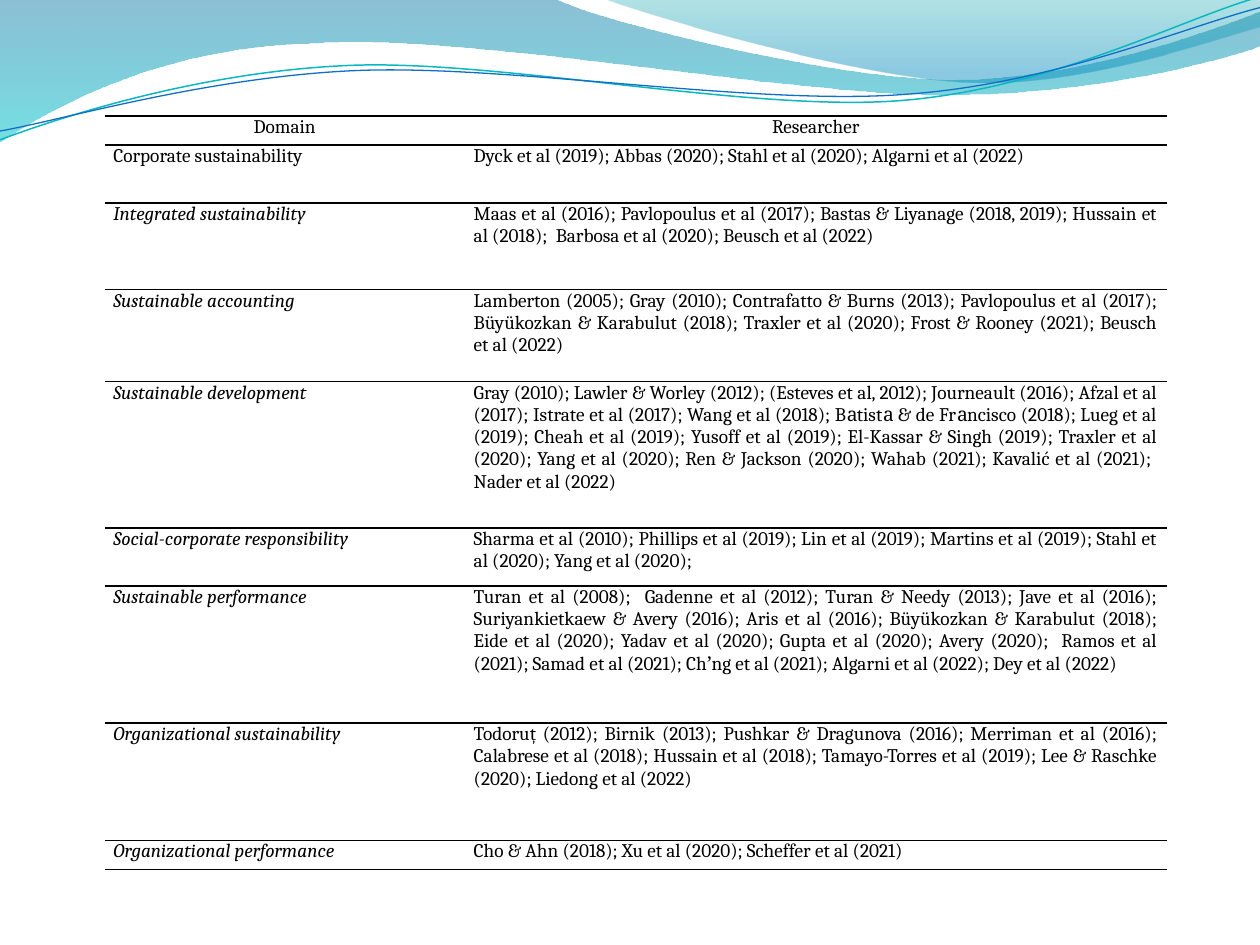
from math import cos, radians, sin

from lxml.etree import SubElement
from pptx import Presentation
from pptx.dml.color import RGBColor
from pptx.enum.text import PP_ALIGN
from pptx.oxml import parse_xml
from pptx.oxml.ns import nsdecls, qn
from pptx.util import Inches, Pt

BLACK = RGBColor(0, 0, 0)
WHITE = RGBColor(255, 255, 255)
DEEP_BLUE = RGBColor(0x00, 0x74, 0xA1)
AQUA = RGBColor(0x00, 0xC6, 0xCF)
SEA = RGBColor(0x00, 0xA1, 0xA9)
SKY = RGBColor(0x00, 0x8B, 0xBF)
TEAL = RGBColor(0x0A, 0xB8, 0xBF)
BLUE = RGBColor(0x0F, 0x6F, 0xC6)
FONT = "Cambria"

HEADER = ("Domain", "Researcher")
ROWS = [
    (0.46, "Corporate sustainability",
     "Dyck et al (2019); Abbas (2020); Stahl et al (2020); Algarni et al (2022)"),
    (0.69, "Integrated sustainability",
     "Maas et al (2016); Pavlopoulus et al (2017); Bastas & Liyanage (2018, 2019); "
     "Hussain et al (2018);  Barbosa et al (2020); Beusch et al (2022)"),
    (0.73, "Sustainable accounting",
     "Lamberton (2005); Gray (2010); Contrafatto & Burns (2013); Pavlopoulus et al (2017); "
     "Büyükozkan & Karabulut (2018); Traxler et al (2020); Frost & Rooney (2021); "
     "Beusch et al (2022)"),
    (1.16, "Sustainable development",
     "Gray (2010); Lawler & Worley (2012); (Esteves et al, 2012); Journeault (2016); "
     "Afzal et al (2017); Istrate et al (2017); Wang et al (2018); "
     "Bаtistа & de Frаncisco (2018); Lueg et al (2019); Cheah et al (2019); "
     "Yusoff et al (2019); El-Kassar & Singh (2019); Traxler et al (2020); "
     "Yang et al (2020); Ren & Jackson (2020); Wahab (2021); Kavalić et al (2021);  "
     "Nader et al (2022)"),
    (0.46, "Social-corporate responsibility",
     "Sharma et al (2010); Phillips et al (2019); Lin et al (2019); Martins et al (2019); "
     "Stahl et al (2020); Yang et al (2020);"),
    (1.09, "Sustainable performance",
     "Turan et al (2008);  Gadenne et al (2012); Turan & Needy (2013); Jave et al (2016); "
     "Suriyankietkaew & Avery (2016); Aris et al (2016); Büyükozkan & Karabulut (2018); "
     "Eide et al (2020); Yadav et al (2020); Gupta et al (2020); Avery (2020);  "
     "Ramos et al (2021); Samad et al (2021); Chʼng et al (2021); Algarni et al (2022); "
     "Dey et al (2022)"),
    (0.93, "Organizational sustainability",
     "Todoruț (2012); Birnik (2013); Pushkar & Dragunova (2016); Merriman et al (2016); "
     "Calabrese et al (2018); Hussain et al (2018); Tamayo-Torres et al (2019); "
     "Lee & Raschke (2020); Liedong et al (2022)"),
    (0.23, "Organizational performance",
     "Cho & Ahn (2018); Xu et al (2020); Scheffer et al (2021)"),
]
HEADER_HEIGHT = 0.23
COL_WIDTHS = (2.86, 5.57)
TABLE_LEFT, TABLE_TOP = 0.83, 0.92

WAVES = [
    ((-0.01, -0.01, 10.02, 1.14),
     [(0, 0), (4.4, -0.01),
      (4.76, 0.17, 6.64, 0.63, 7.58, 0.63), (8.53, 0.63, 9.58, 0.26, 10, 0.09),
      (10.01, 0.36),
      (9.83, 0.44, 8.7, 0.76, 7.46, 0.75), (6.22, 0.75, 3.82, 0.28, 2.57, 0.34),
      (1.29, 0.36, 0.46, 0.83, -0.01, 1.13), (0, 0)],
     [(0, DEEP_BLUE, 45), (100, AQUA, 55)]),
    ((4.79, -0.01, 5.21, 0.7),
     [(4.79, -0.01),
      (5.09, 0.11, 6.82, 0.62, 7.69, 0.65), (8.56, 0.69, 9.61, 0.32, 10, 0.21),
      (10, 0), (4.79, -0.01)],
     [(0, SEA, 30), (80, SKY, 45)]),
]
RIPPLES = [
    ((-0.02, 0.22, 10.02, 0.71),
     [(0, 1.11), (0.48, 0.93, 1.58, 0.57, 2.77, 0.52),
      (3.95, 0.47, 5.93, 0.89, 7.13, 0.8), (8.33, 0.71, 9.38, 0.15, 9.98, -0.02)],
     TEAL, 0.85),
    ((-0.02, 0.3, 10.03, 0.58),
     [(0, 1.04), (0.47, 0.96, 1.64, 0.61, 2.83, 0.56),
      (4.03, 0.51, 5.97, 0.84, 7.17, 0.75), (8.36, 0.67, 9.41, 0.21, 10, 0.06)],
     BLUE, 0.75),
]
RIPPLE_TILT = -2.7


def to_local(x, y, box, tilt):
    left, top, width, height = box
    dx, dy = x - left - width / 2, y - top - height / 2
    c, n = cos(radians(-tilt)), sin(radians(-tilt))
    return Inches(dx * c - dy * n + width / 2), Inches(dx * n + dy * c + height / 2)


def add_curve(s, box, segments, close, tilt=0):
    builder = s.shapes.build_freeform()
    builder.add_line_segments([(Inches(seg[-2]), Inches(seg[-1])) for seg in segments], close)
    sp = builder.convert_to_shape()
    sp.left, sp.top, sp.width, sp.height = map(Inches, box)
    sp.rotation = tilt
    sp.shadow.inherit = False
    outline = next(sp._element.iter(qn("a:path")))
    for child in list(outline):
        outline.remove(child)
    outline.set("w", str(sp.width))
    outline.set("h", str(sp.height))
    for i, seg in enumerate(segments):
        tag = "a:moveTo" if i == 0 else "a:lnTo" if len(seg) == 2 else "a:cubicBezTo"
        step = SubElement(outline, qn(tag))
        for x, y in zip(seg[::2], seg[1::2]):
            px, py = to_local(x, y, box, tilt)
            pt = SubElement(step, qn("a:pt"))
            pt.set("x", str(px))
            pt.set("y", str(py))
    if close:
        SubElement(outline, qn("a:close"))
    return sp


def add_wave(s, box, segments, stops):
    sp = add_curve(s, box, segments, True)
    sp.line.fill.background()
    sp.fill.gradient()
    sp.fill.gradient_angle = 270
    for stop, (position, color, _) in zip(sp.fill.gradient_stops, stops):
        stop.position = position / 100
        stop.color.rgb = color
    for clr, (_, _, opacity) in zip(sp._element.spPr.iter(qn("a:srgbClr")), stops):
        SubElement(clr, qn("a:alpha")).set("val", str(opacity * 1000))


def add_ripple(s, box, segments, color, width):
    sp = add_curve(s, box, segments, False, RIPPLE_TILT)
    sp.fill.background()
    sp.line.color.rgb = color
    sp.line.width = Pt(width)


def set_borders(cell):
    rule = f'<a:solidFill><a:srgbClr val="{BLACK}"/></a:solidFill>'
    edges = (("lnL", "<a:noFill/>"), ("lnR", "<a:noFill/>"), ("lnT", rule), ("lnB", rule))
    for n, (tag, fill) in enumerate(edges):
        ln = parse_xml(f'<a:{tag} {nsdecls("a")} w="{Pt(1)}">{fill}</a:{tag}>')
        cell._tc.get_or_add_tcPr().insert(n, ln)


def fill_cell(cell, text, align, italic):
    cell.fill.solid()
    cell.fill.fore_color.rgb = WHITE
    cell.margin_left = cell.margin_right = Inches(0.07)
    cell.margin_top = cell.margin_bottom = 0
    set_borders(cell)
    p = cell.text_frame.paragraphs[0]
    p.text = text
    p.alignment = align
    font = p.runs[0].font
    font.name, font.size, font.italic = FONT, Pt(11), italic
    font.color.rgb = BLACK


def add_research_table(s):
    heights = [HEADER_HEIGHT] + [row[0] for row in ROWS]
    table = s.shapes.add_table(
        len(heights), len(COL_WIDTHS), Inches(TABLE_LEFT), Inches(TABLE_TOP),
        Inches(sum(COL_WIDTHS)), Inches(sum(heights))).table
    table.first_row = table.horz_banding = False
    for column, width in zip(table.columns, COL_WIDTHS):
        column.width = Inches(width)
    for row, height in zip(table.rows, heights):
        row.height = Inches(height)
    for r, texts in enumerate([HEADER] + [row[1:] for row in ROWS]):
        align = PP_ALIGN.JUSTIFY if r else PP_ALIGN.CENTER
        for c, text in enumerate(texts):
            fill_cell(table.cell(r, c), text, align, c == 0 and r > 1)


def main():
    prs = Presentation()
    prs.slide_width, prs.slide_height = Inches(10), Inches(7.5)
    s = prs.slides.add_slide(prs.slide_layouts[6])
    for wave in WAVES:
        add_wave(s, *wave)
    for ripple in RIPPLES:
        add_ripple(s, *ripple)
    add_research_table(s)
    prs.save("out.pptx")


if __name__ == "__main__":
    main()
